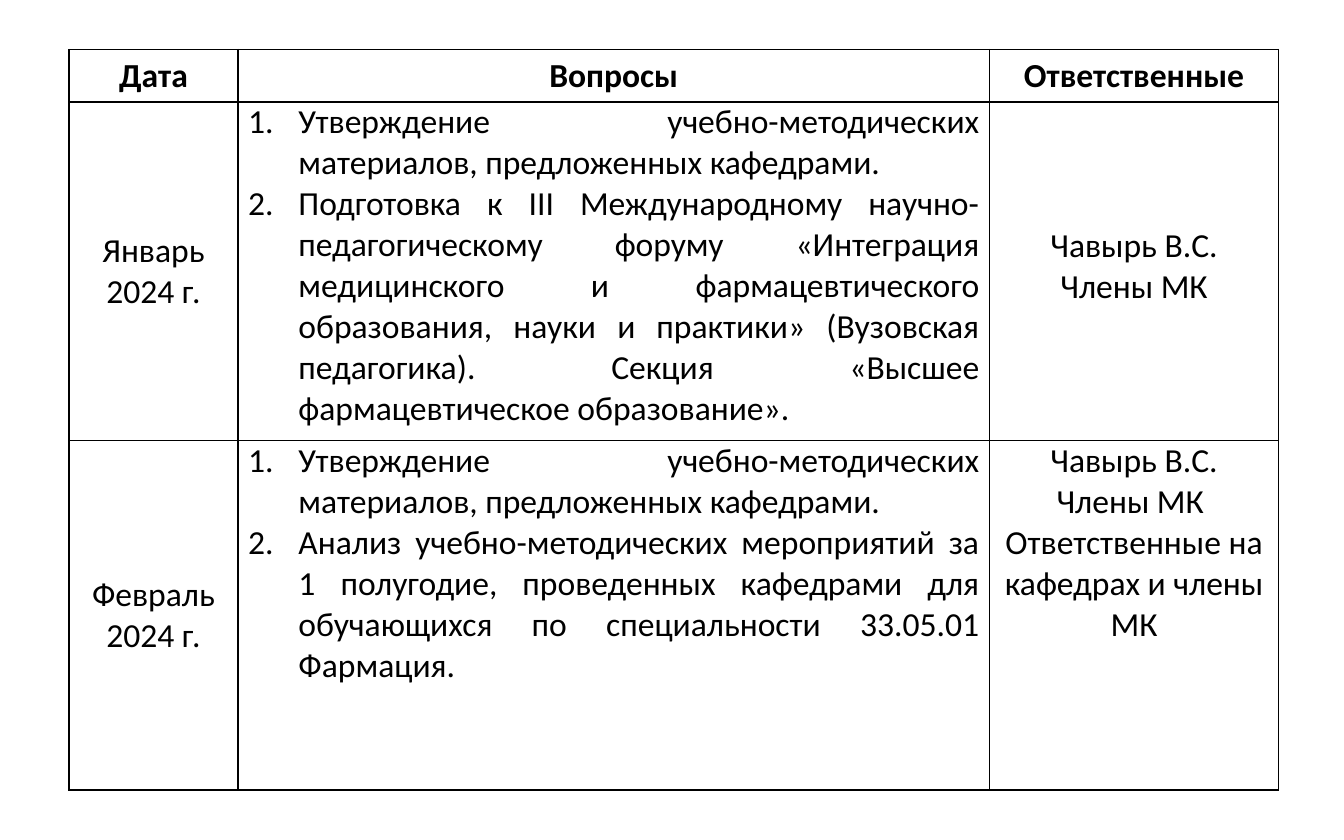
import pptx
import pptx.dml.color
import pptx.enum.text
import pptx.oxml
import pptx.oxml.ns
import pptx.util

Pt = pptx.util.Pt
ALIGN = pptx.enum.text.PP_ALIGN
ANCHOR = pptx.enum.text.MSO_ANCHOR

# Content: each cell is a list of paragraphs
HEADERS = ["Дата", "Вопросы", "Ответственные"]
MATERIALS = "Утверждение учебно-методических материалов, предложенных кафедрами."
MEETINGS = [
    {
        "date": ["Январь", "2024 г."],
        "questions": [
            MATERIALS,
            "Подготовка к III Международному научно-педагогическому форуму "
            "«Интеграция медицинского и фармацевтического образования, науки "
            "и практики» (Вузовская педагогика). Секция «Высшее "
            "фармацевтическое образование».",
        ],
        "responsible": ["Чавырь В.С.", "Члены МК"],
        "responsible_format": {"anchor": ANCHOR.MIDDLE, "bottom": 5},
    },
    {
        "date": ["Февраль", "2024 г."],
        "questions": [
            MATERIALS,
            "Анализ учебно-методических мероприятий за 1 полугодие, "
            "проведенных кафедрами для обучающихся по специальности "
            "33.05.01 Фармация.",
        ],
        "responsible": ["Чавырь В.С.", "Члены МК\u00a0",
                        "Ответственные на кафедрах и члены МК"],
        "responsible_format": {"anchor": ANCHOR.TOP},
    },
]

# Layout in points
LEFT, TOP = 37, 26.6
COLUMN_WIDTHS = [90.5, 402.7, 154.8]
ROW_HEIGHTS = [28, 181.4, 187.2]
SIDE_MARGIN = 5.4
LIST_INDENT = 27
BLACK, WHITE = "000000", "FFFFFF"


def color(value):
    return pptx.dml.color.RGBColor.from_string(value)


def number_paragraph(paragraph):
    properties = paragraph._p.get_or_add_pPr()
    properties.set("marL", str(Pt(LIST_INDENT)))
    properties.set("indent", str(-Pt(LIST_INDENT)))
    numbering = pptx.oxml.ns.qn("a:buAutoNum")
    properties.append(properties.makeelement(numbering, {"type": "arabicPeriod"}))


def draw_borders(cell):
    """Put a thin black line on all four sides; lines precede the fill."""
    properties = cell._tc.get_or_add_tcPr()
    for position, side in enumerate(["lnL", "lnR", "lnT", "lnB"]):
        properties.insert(position, pptx.oxml.parse_xml(
            f'<a:{side} {pptx.oxml.ns.nsdecls("a")} w="{Pt(1)}">'
            f'<a:solidFill><a:srgbClr val="{BLACK}"/></a:solidFill></a:{side}>'))


def write_cell(cell, lines, bold=False, align=ALIGN.CENTER,
               anchor=ANCHOR.MIDDLE, numbered=False, bottom=0):
    cell.fill.solid()
    cell.fill.fore_color.rgb = color(WHITE)
    cell.margin_left = cell.margin_right = Pt(SIDE_MARGIN)
    cell.margin_top, cell.margin_bottom = Pt(0), Pt(bottom)
    cell.vertical_anchor = anchor
    frame = cell.text_frame
    for index, line in enumerate(lines):
        paragraph = frame.add_paragraph() if index else frame.paragraphs[0]
        paragraph.alignment = align
        if numbered:
            number_paragraph(paragraph)
        run = paragraph.add_run()
        run.text = line
        run.font.name, run.font.size, run.font.bold = "Calibri", Pt(18), bold
        run.font.color.rgb = color(BLACK)
    draw_borders(cell)


presentation = pptx.Presentation()
presentation.slide_width, presentation.slide_height = Pt(720), Pt(450)
slide = presentation.slides.add_slide(presentation.slide_layouts[6])

# Table grid
table = slide.shapes.add_table(
    len(ROW_HEIGHTS), len(COLUMN_WIDTHS), Pt(LEFT), Pt(TOP),
    Pt(sum(COLUMN_WIDTHS)), Pt(sum(ROW_HEIGHTS))).table
table.horz_banding = False
for column, width in zip(table.columns, COLUMN_WIDTHS):
    column.width = Pt(width)
for row, height in zip(table.rows, ROW_HEIGHTS):
    row.height = Pt(height)

# Header row
for index, header in enumerate(HEADERS):
    write_cell(table.cell(0, index), [header], bold=True)

# Meeting rows
for row, meeting in enumerate(MEETINGS, start=1):
    write_cell(table.cell(row, 0), meeting["date"])
    write_cell(table.cell(row, 1), meeting["questions"], align=ALIGN.JUSTIFY,
               anchor=ANCHOR.TOP, numbered=True)
    write_cell(table.cell(row, 2), meeting["responsible"],
               **meeting["responsible_format"])

presentation.save("out.pptx")
